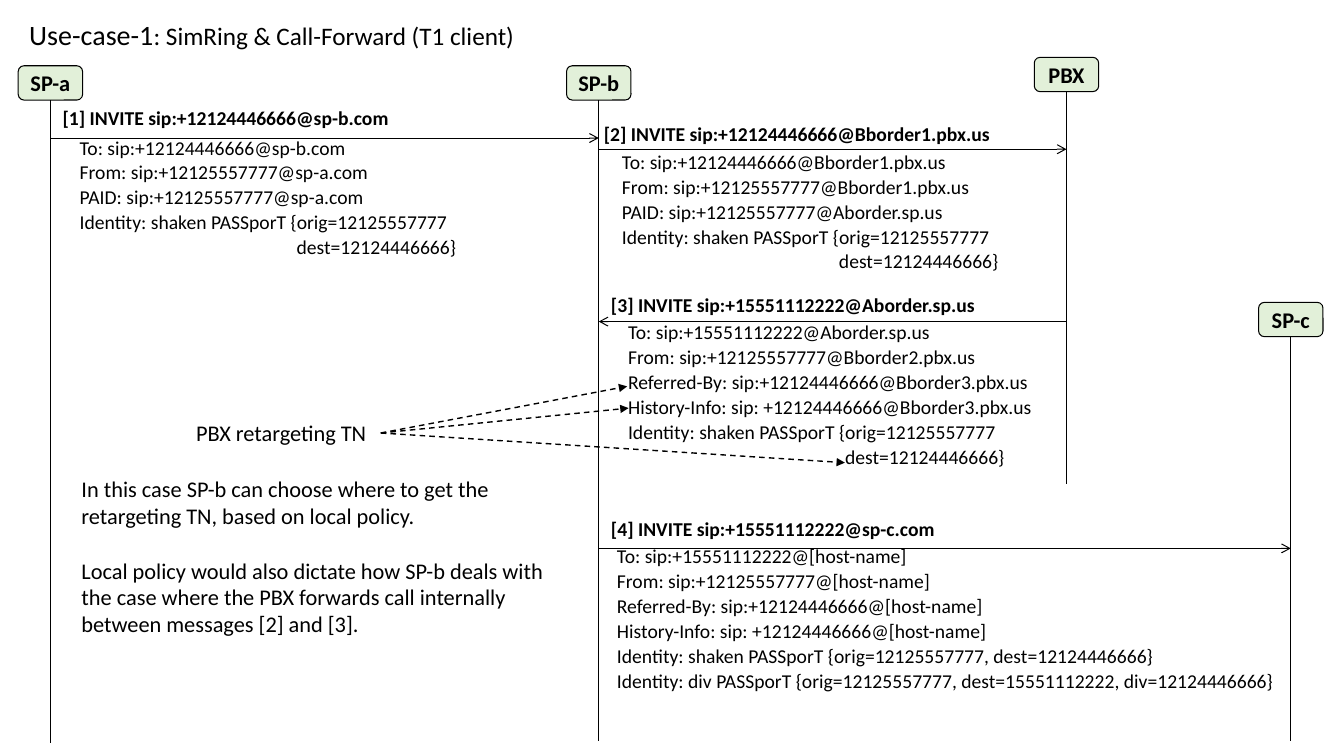
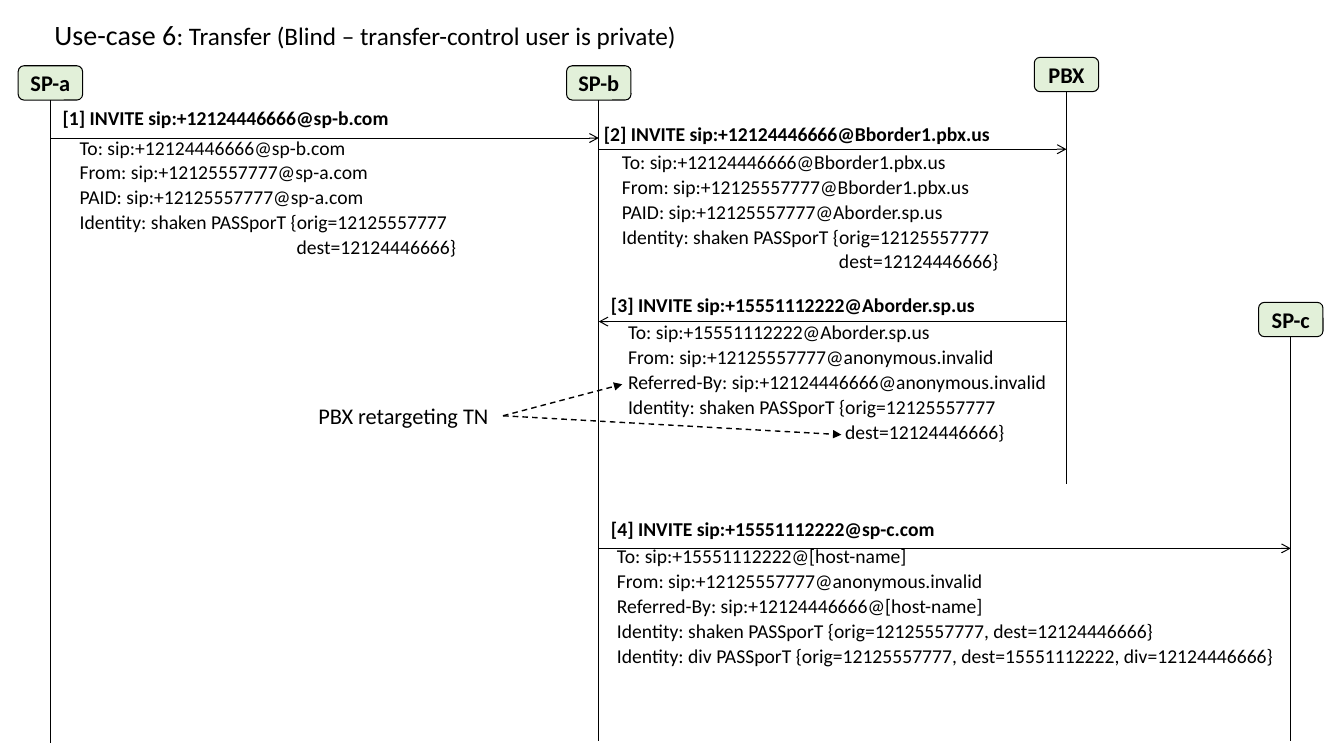
from dataclasses import dataclass

from pptx import Presentation, util as u
from pptx.dml.color import RGBColor
from pptx.enum import dml, shapes, text
from pptx.oxml.ns import qn
from lxml import etree

Pt = u.Pt


@dataclass(frozen=True)
class Theme:
    font: str = "Calibri"
    ink: RGBColor = RGBColor(0, 0, 0)
    party_fill: RGBColor = RGBColor(0xE2, 0xF0, 0xD9)
    title_size: int = 20
    subtitle_size: int = 18
    label_size: int = 16
    message_size: int = 14
    thin: float = 0.75
    dashed: float = 1
    tight: float = 0.9


THEME = Theme()

# Content shared by the slides: name -> (centre x, box top, lifeline end)
PARTIES = {
    "SP-a": (36, 47, 530.5),
    "SP-b": (427.7, 47, 529),
    "PBX": (761.8, 41, 346),
    "SP-c": (922, 216, 529),
}
PARTY_WIDTH, PARTY_HEIGHT = 46, 24.5
DEST = "dest=12124446666}"
SHAKEN = ["Identity: shaken PASSporT {orig=12125557777", DEST]
PASSPORTS = [
    "Identity: shaken PASSporT {orig=12125557777, dest=12124446666}",
    "Identity: div PASSporT {orig=12125557777, dest=15551112222, div=12124446666}",
]

# from, to, arrow y, heading, heading place, header place, header width
MESSAGES = [
    ("SP-a", "SP-b", 98.6, "[1] INVITE sip:+12124446666@sp-b.com",
     (35.3, 72.7), (47.5, 97.9), 343),
    ("SP-b", "PBX", 106.6, "[2] INVITE sip:+12124446666@Bborder1.pbx.us",
     (421.9, 84.2), (434.9, 108), 343),
    ("PBX", "SP-b", 229.7, "[3] INVITE sip:+15551112222@Aborder.sp.us",
     (427, 205.9), (439.2, 229.7), 375),
    ("SP-b", "SP-c", 391.7, "[4] INVITE sip:+15551112222@sp-c.com",
     (427, 365.8), (431.3, 389.5), 515),
]
FIRST_HEADERS = [
    ["To: sip:+12124446666@sp-b.com",
     "From: sip:+12125557777@sp-a.com",
     "PAID: sip:+12125557777@sp-a.com", *SHAKEN],
    ["To: sip:+12124446666@Bborder1.pbx.us",
     "From: sip:+12125557777@Bborder1.pbx.us",
     "PAID: sip:+12125557777@Aborder.sp.us", *SHAKEN],
]

# Content of each slide
SLIDES = [
    {
        "title": ("Use-case-1", ": SimRing & Call-Forward (T1 client)"),
        "title_place": (13.7, 0, 926, 52.6),
        "headers": [
            ["To: sip:+15551112222@Aborder.sp.us",
             "From: sip:+12125557777@Bborder2.pbx.us",
             "Referred-By: sip:+12124446666@Bborder3.pbx.us",
             "History-Info: sip: +12124446666@Bborder3.pbx.us", *SHAKEN],
            ["To: sip:+15551112222@[host-name]",
             "From: sip:+12125557777@[host-name]",
             "Referred-By: sip:+12124446666@[host-name]",
             "History-Info: sip: +12124446666@[host-name]", *PASSPORTS],
        ],
        "label_place": (133, 296),
        "targets": [(448, 276), (449, 291.5), (603.5, 330.5)],
        "notes": [
            "In this case SP-b can choose where to get the retargeting TN, "
            "based on local policy.",
            "Local policy would also dictate how SP-b deals with the case where "
            "the PBX forwards call internally between messages [2] and [3].",
        ],
    },
    {
        "title": ("Use-case 6", ": Transfer (Blind – transfer-control user is private)"),
        "title_place": (31.7, 0, 535, 52.6),
        "headers": [
            ["To: sip:+15551112222@Aborder.sp.us",
             "From: sip:+12125557777@anonymous.invalid",
             "Referred-By: sip:+12124446666@anonymous.invalid", *SHAKEN],
            ["To: sip:+15551112222@[host-name]",
             "From: sip:+12125557777@anonymous.invalid",
             "Referred-By: sip:+12124446666@[host-name]", *PASSPORTS],
        ],
        "label_place": (220.3, 283.7),
        "targets": [(601, 310.5), (444.5, 274.5)],
        "notes": [],
    },
]
RETARGET_LABEL = "PBX retargeting TN"
NOTES_PLACE = (51.1, 336.2, 359.3, 124)
LINE_HEIGHT = 17.9
DEST_INDENT = 155


def apply(target, values):
    for name, value in values.items():
        setattr(target, name, value)


def add_span(para, words, size, bold=False):
    span = para.add_run()
    span.text = words
    apply(span.font, {"name": THEME.font, "size": Pt(size), "bold": bold})
    span.font.color.rgb = THEME.ink


def add_text(page, place, lines, size, bold=False, wrap=True, insets=None,
             gap=0, first_gap=0, spacing=1.0):
    box = page.shapes.add_textbox(*map(Pt, place))
    frame = box.text_frame
    apply(frame, {"word_wrap": wrap, "auto_size": text.MSO_AUTO_SIZE.SHAPE_TO_FIT_TEXT})
    if insets:
        across, down = map(Pt, insets)
        apply(frame, {"margin_left": across, "margin_right": across,
                      "margin_top": down, "margin_bottom": down})
    for index, line in enumerate(lines):
        para = frame.add_paragraph() if index else frame.paragraphs[0]
        apply(para, {"space_before": Pt(gap if index else first_gap),
                     "line_spacing": spacing})
        if line == DEST:
            para._p.get_or_add_pPr().set("marL", str(Pt(DEST_INDENT)))
        add_span(para, line, size, bold)
    return box


def add_line(page, start, end, width=THEME.thin, head=None, dash=None):
    line = page.shapes.add_connector(
        shapes.MSO_CONNECTOR.STRAIGHT, *map(Pt, (*start, *end)))
    line.line.color.rgb = THEME.ink
    line.line.width = Pt(width)
    if dash:
        line.line.dash_style = dash
    if head:
        etree.SubElement(line.line._get_or_add_ln(), qn("a:tailEnd"), type=head)
    etree.SubElement(line._element.spPr, qn("a:effectLst"))
    return line


def add_title(page, words, place):
    title = page.shapes.title
    apply(title, dict(zip(("left", "top", "width", "height"), map(Pt, place))))
    apply(title.text_frame, {"vertical_anchor": text.MSO_ANCHOR.MIDDLE,
                             "word_wrap": True,
                             "auto_size": text.MSO_AUTO_SIZE.NONE})
    para = title.text_frame.paragraphs[0]
    apply(para, {"alignment": text.PP_ALIGN.LEFT, "line_spacing": THEME.tight})
    for part, size in zip(words, (THEME.title_size, THEME.subtitle_size)):
        add_span(para, part, size)


def add_party(page, name, centre, top, end):
    box = page.shapes.add_shape(
        shapes.MSO_SHAPE.ROUNDED_RECTANGLE,
        *map(Pt, (centre - PARTY_WIDTH / 2, top, PARTY_WIDTH, PARTY_HEIGHT)))
    box.shadow.inherit = False
    box.fill.solid()
    box.fill.fore_color.rgb = THEME.party_fill
    box.line.color.rgb = THEME.ink
    box.line.width = Pt(THEME.thin)
    apply(box.text_frame, {"margin_left": 0, "margin_right": 0, "margin_top": 0,
                           "margin_bottom": 0, "word_wrap": False,
                           "vertical_anchor": text.MSO_ANCHOR.MIDDLE})
    para = box.text_frame.paragraphs[0]
    para.alignment = text.PP_ALIGN.CENTER
    add_span(para, name, THEME.label_size, bold=True)
    lifeline = add_line(page, (centre, top + PARTY_HEIGHT), (centre, end))
    lifeline.begin_connect(box, 2)


def add_message(page, message, headers):
    source, target, y, heading, heading_at, headers_at, width = message
    add_line(page, (PARTIES[source][0], y), (PARTIES[target][0], y), head="arrow")
    add_text(page, (*heading_at, 334, 25.2), [heading], THEME.message_size, bold=True,
             insets=(9.4, 5), first_gap=8, spacing=THEME.tight)
    add_text(page, (*headers_at, width, LINE_HEIGHT * len(headers)), headers,
             THEME.message_size, insets=(9.4, 0.7), gap=2.7, first_gap=2.7,
             spacing=THEME.tight)


def add_retargeting(page, place, targets):
    width, height = 139, 26.6
    label = add_text(page, (*place, width, height), [RETARGET_LABEL],
                     THEME.label_size, wrap=False)
    start = (place[0] + width, place[1] + height / 2)
    for target in targets:
        arrow = add_line(page, start, target, THEME.dashed, "triangle",
                         dml.MSO_LINE.DASH)
        arrow.begin_connect(label, 3)


def main():
    deck = Presentation()
    deck.slide_width, deck.slide_height = Pt(960), Pt(540)
    for content in SLIDES:
        page = deck.slides.add_slide(deck.slide_layouts.get_by_name("Title Only"))
        add_title(page, content["title"], content["title_place"])
        # Parties and their lifelines
        for name, position in PARTIES.items():
            add_party(page, name, *position)
        # Messages with their headers
        for message, headers in zip(MESSAGES, FIRST_HEADERS + content["headers"]):
            add_message(page, message, headers)
        # Retargeting callout and policy notes
        add_retargeting(page, content["label_place"], content["targets"])
        if content["notes"]:
            add_text(page, NOTES_PLACE, content["notes"], THEME.label_size, gap=19.5)
    deck.save("out.pptx")


if __name__ == "__main__":
    main()
